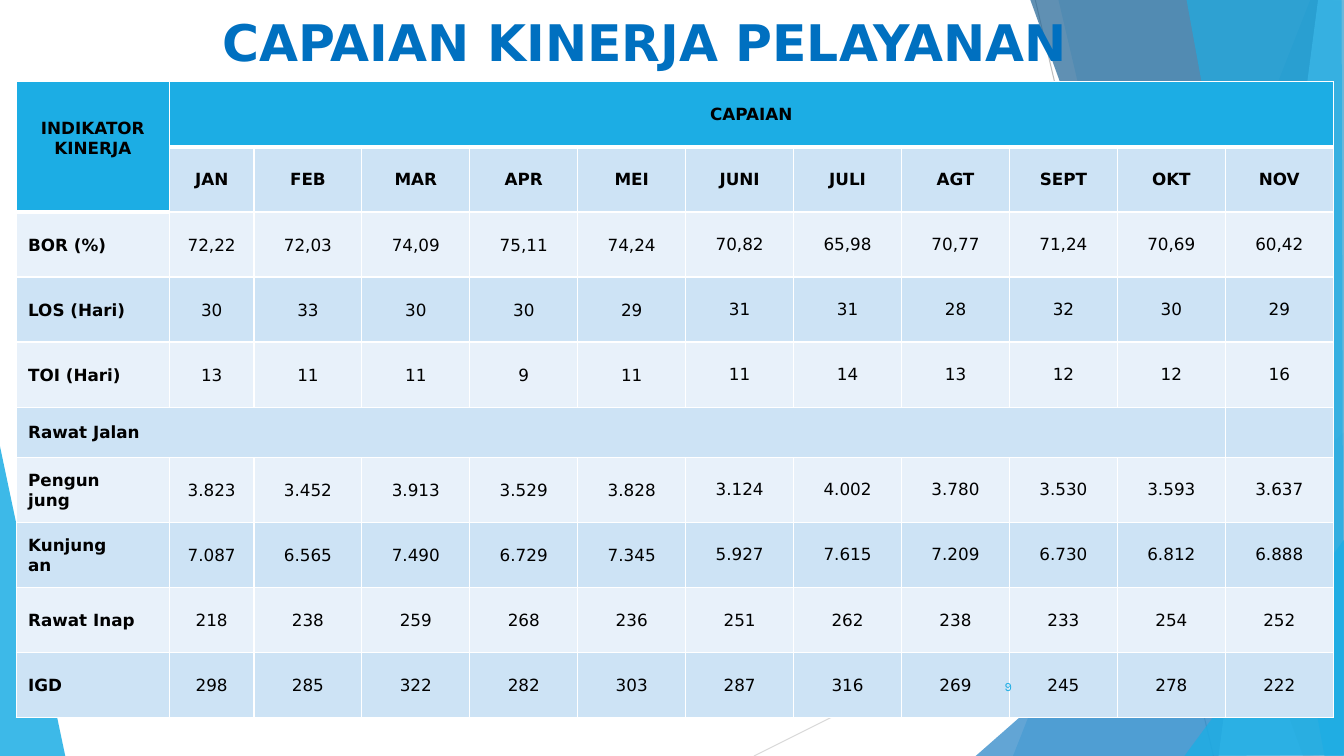
from dataclasses import dataclass

from lxml.etree import SubElement as Sub
from pptx import Presentation
from pptx.dml.color import RGBColor as Rgb
from pptx.enum.shapes import MSO_CONNECTOR as Link
from pptx.enum.text import MSO_ANCHOR as Anchor, PP_ALIGN as Align
from pptx.oxml.ns import qn
from pptx.util import Cm, Pt


@dataclass
class Theme:
    cyan: str = "1CADE4"
    blue: str = "2683C6"
    navy: str = "1D6294"
    sky: str = "77CEEF"
    title: str = "0070C0"
    ink: str = "000000"
    white: str = "FFFFFF"
    dark: str = "CDE3F5"
    light: str = "E8F1FA"
    font: str = "DejaVu Sans"
    small: str = "Karla"
    head: int = 36
    body: int = 12
    foot: int = 9


theme = Theme()


def write(frame, text, size=theme.body, color=theme.ink, font=theme.font,
          bold=False, align=Align.CENTER, anchor=Anchor.MIDDLE):
    frame.word_wrap = True
    frame.vertical_anchor = anchor
    for i, line in enumerate(text.split("\n")):
        para = frame.add_paragraph() if i else frame.paragraphs[0]
        para.alignment = align
        run = para.add_run()
        run.text = line
        run.font.size = Pt(size)
        run.font.name = font
        run.font.bold = bold
        run.font.color.rgb = Rgb.from_string(color)


deck = Presentation()
deck.slide_width, deck.slide_height = Cm(33.87), Cm(19.05)
slide = deck.slides.add_slide(deck.slide_layouts[6])
shapes = slide.shapes

rays = [
    ((19, 19.05, 33.88, 11.61), "D9D9D9"),
    ((26.09, 0, 30.58, 19.05), "BFBFBF"),
]
facets = [
    (theme.cyan, 85, [(-0.02, 11.15), (1.65, 19.07), (-0.02, 19.05)]),
    (theme.cyan, 30, [(33.02, 0), (25.53, 19.05), (33.9, 19.07), (33.88, 0.02)]),
    (theme.cyan, 20, [(26.67, -0.02), (31.14, 19.05), (33.88, 19.05), (33.88, -0.02)]),
    (theme.blue, 72, [(24.59, 19.05), (33.86, 10.9), (33.88, 19.05)]),
    (theme.navy, 70, [(25.96, -0.02), (32.84, 19.05), (33.88, 19.02), (33.88, -0.02)]),
    (theme.sky, 70, [(33.22, -0.02), (30.71, 19.05), (33.88, 19.05), (33.88, -0.02)]),
    (theme.cyan, 65, [(29.9, -0.02), (33.38, 19.05), (33.86, 19.05), (33.81, -0.02)]),
    (theme.cyan, 80, [(29.85, 19.05), (33.88, 13.59), (33.88, 19.02)]),
]

for ends, color in rays:
    ray = shapes.add_connector(Link.STRAIGHT, *map(Cm, ends))
    ray.line.color.rgb = Rgb.from_string(color)
    ray.line.width = Pt(0.75)
    Sub(ray._element.spPr, qn("a:effectLst"))

for color, alpha, spots in facets:
    spots = [(Cm(x), Cm(y)) for x, y in spots]
    pen = shapes.build_freeform(*spots[0])
    pen.add_line_segments(spots[1:], close=True)
    facet = pen.convert_to_shape()
    facet.shadow.inherit = False
    facet.line.fill.background()
    facet.fill.solid()
    facet.fill.fore_color.rgb = Rgb.from_string(color)
    tint = facet._element.spPr.find(".//" + qn("a:srgbClr"))
    Sub(tint, qn("a:alpha")).set("val", str(alpha * 1000))

title = shapes.add_textbox(Cm(1.02), Cm(0.15), Cm(30.48), Cm(3.18))
write(title.text_frame, "CAPAIAN KINERJA PELAYANAN", size=theme.head,
      color=theme.title, bold=True, anchor=Anchor.TOP)

data = [
    ["INDIKATOR\nKINERJA", "CAPAIAN"],
    ["", "JAN", "FEB", "MAR", "APR", "MEI", "JUNI", "JULI", "AGT", "SEPT", "OKT", "NOV"],
    ["BOR (%)", "72,22", "72,03", "74,09", "75,11", "74,24", "70,82",
     "65,98", "70,77", "71,24", "70,69", "60,42"],
    ["LOS (Hari)", "30", "33", "30", "30", "29", "31", "31", "28", "32", "30", "29"],
    ["TOI (Hari)", "13", "11", "11", "9", "11", "11", "14", "13", "12", "12", "16"],
    ["Rawat Jalan"],
    ["Pengun\njung", "3.823", "3.452", "3.913", "3.529", "3.828", "3.124",
     "4.002", "3.780", "3.530", "3.593", "3.637"],
    ["Kunjung\nan", "7.087", "6.565", "7.490", "6.729", "7.345", "5.927",
     "7.615", "7.209", "6.730", "6.812", "6.888"],
    ["Rawat Inap", "218", "238", "259", "268", "236", "251", "262", "238", "233", "254", "252"],
    ["IGD", "298", "285", "322", "282", "303", "287", "316", "269", "245", "278", "222"],
]
wide = [3.86, 2.13] + [2.72] * 10
high = [1.64] * 5 + [1.27] + [1.64] * 4

grid = shapes.add_table(len(high), len(wide), Cm(0.41), Cm(2.06),
                        Cm(sum(wide)), Cm(sum(high))).table
grid.first_row = grid.horz_banding = False
for col, size in zip(grid.columns, wide):
    col.width = Cm(size)
for row, size in zip(grid.rows, high):
    row.height = Cm(size)

for r in range(len(high)):
    for c in range(len(wide)):
        cell = grid.cell(r, c)
        label = c == 0 and r > 1
        last = 1 if c == 0 else 0
        cell.margin_left = Cm(0.3 if label else 0.04)
        cell.margin_right = Cm(0.04)
        cell.margin_top = Cm(0 if c > 5 and r > 1 else 0.04)
        cell.margin_bottom = Cm(0.45 if r == c == 0 else 0)
        props = cell._tc.get_or_add_tcPr()
        for side in "LRTB":
            thick = (side, r) in (("B", last), ("T", last + 1))
            edge = Sub(props, qn("a:ln" + side), w=str(Pt(3 if thick else 1)))
            Sub(Sub(edge, qn("a:solidFill")), qn("a:srgbClr"), val=theme.white)
        band = theme.dark if r % 2 else theme.light
        cell.fill.solid()
        cell.fill.fore_color.rgb = Rgb.from_string(theme.cyan if r <= last else band)
        if c < len(data[r]) and data[r][c]:
            write(cell.text_frame, data[r][c], bold=r < 2 or c == 0,
                  align=Align.LEFT if label else Align.CENTER)
            cell.vertical_anchor = Anchor.MIDDLE

for start, end in [((0, 0), (1, 0)), ((0, 1), (0, 11)), ((5, 0), (5, 10))]:
    grid.cell(*start).merge(grid.cell(*end))

page = shapes.add_textbox(Cm(23.85), Cm(16.79), Cm(1.9), Cm(1.02))
write(page.text_frame, "9", size=theme.foot, color=theme.cyan,
      font=theme.small, align=Align.RIGHT)

deck.save("out.pptx")
